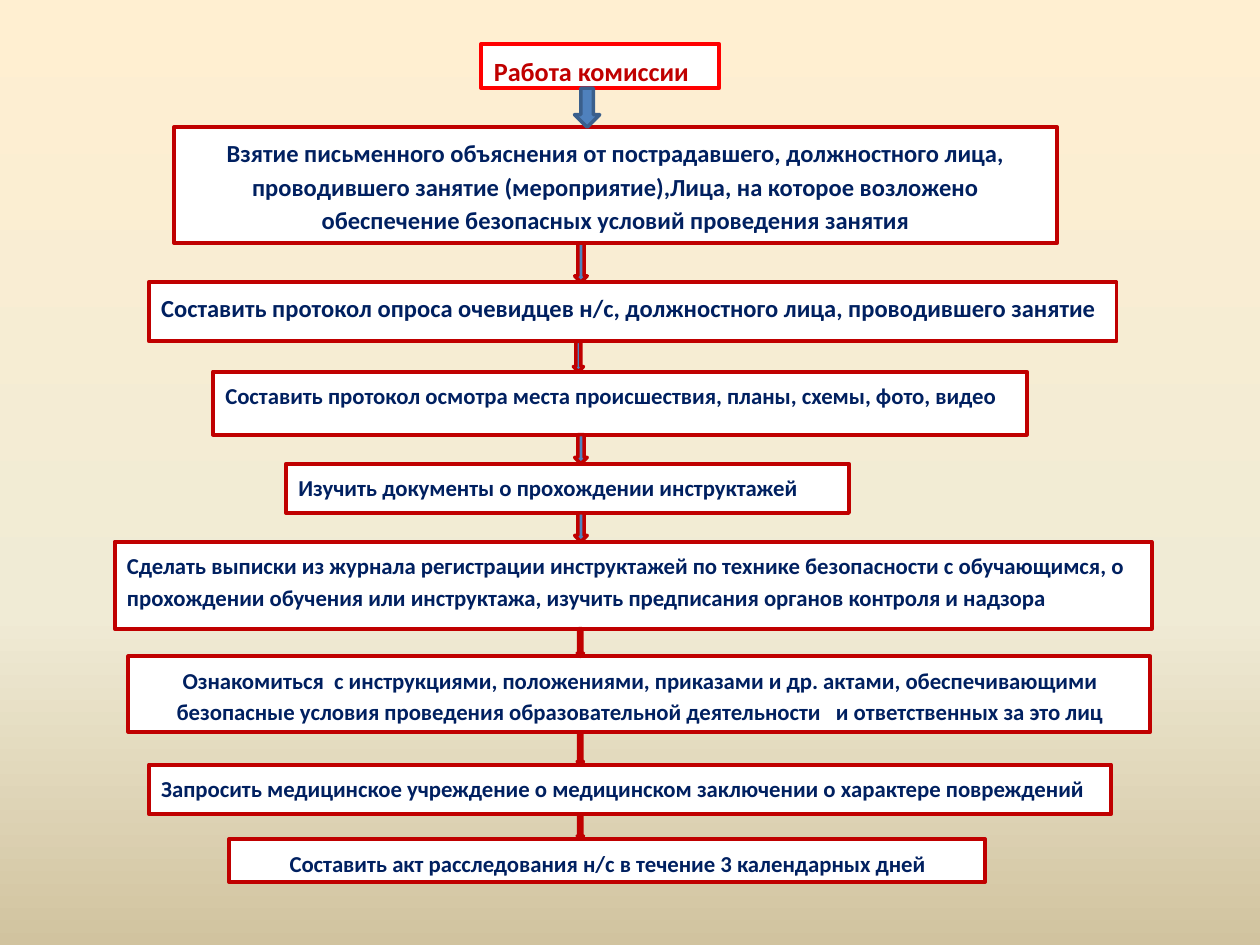
from copy import deepcopy

from pptx import Presentation
from pptx.dml.color import RGBColor
from pptx.enum import shapes, text
from pptx.util import Pt

COLORS = {
    "white": "FFFFFF", "red": "FF0000", "dark_red": "C00000", "navy": "002060",
    "blue": "4F81BD", "steel": "3A5F8C",
    "cream": "FFEFD1", "ivory": "F0EBD5", "sand": "D1C39F",
}
LEFT, CENTER = text.PP_ALIGN.LEFT, text.PP_ALIGN.CENTER
FIXED, GROW = text.MSO_AUTO_SIZE.NONE, text.MSO_AUTO_SIZE.SHAPE_TO_FIT_TEXT

HEADING = ("Работа комиссии", (275, 25.2, 136, 25.2))

# wording, (left, top, width, height), text size, alignment, autosize
STEPS = [
    ("Взятие письменного объяснения от пострадавшего, должностного лица, "
     "проводившего занятие (мероприятие),Лица, на которое возложено "
     "обеспечение безопасных условий проведения занятия",
     (99.4, 72.7, 504.7, 66.2), 14, CENTER, FIXED),
    ("Составить протокол опроса очевидцев н/с, должностного лица, "
     "проводившего занятие",
     (85, 161.3, 553, 33.8), 14, LEFT, FIXED),
    ("Составить протокол осмотра места происшествия, планы, схемы, фото, видео",
     (121.7, 212.4, 465.1, 36), 13, LEFT, FIXED),
    ("Изучить документы о прохождении инструктажей",
     (163.4, 265, 321.8, 28.1), 13, LEFT, FIXED),
    ("Сделать выписки из журнала регистрации инструктажей по технике "
     "безопасности с обучающимся, о прохождении обучения или инструктажа, "
     "изучить предписания органов контроля и надзора",
     (65.5, 309.6, 592.6, 49.7), 13, LEFT, FIXED),
    ("Ознакомиться  с инструкциями, положениями, приказами и др. актами, "
     "обеспечивающими безопасные условия проведения образовательной "
     "деятельности   и ответственных за это лиц",
     (73.4, 375.1, 583.9, 43.2), 13, CENTER, GROW),
    ("Запросить медицинское учреждение о медицинском заключении о характере "
     "повреждений",
     (85, 437, 550, 28.1), 13, LEFT, FIXED),
    ("Составить акт расследования н/с в течение 3 календарных дней",
     (131, 479.5, 432, 24.5), 13, CENTER, GROW),
]

# (centre, width) of the arrow that leads into each step
ARROWS = [(335.5, 14.4), (332, 7.2), (330.5, 5.8), (332, 7.2), (332, 7.2),
          (331.6, 3.6), (331.6, 3.6), (331.6, 3.6)]


def rgb(name):
    return RGBColor.from_string(COLORS[name])


def write(shape, wording, size, color="navy", align=LEFT, autosize=FIXED):
    frame = shape.text_frame
    frame.word_wrap = True
    frame.auto_size = autosize
    frame.vertical_anchor = text.MSO_ANCHOR.TOP
    paragraph = frame.paragraphs[0]
    paragraph.alignment = align
    paragraph.line_spacing = 1.15
    paragraph.space_after = Pt(10)
    run = paragraph.add_run()
    run.text = wording
    run.font.name = "Calibri"
    run.font.size = Pt(size)
    run.font.bold = True
    run.font.color.rgb = rgb(color)


class FlowSlide:
    """Holds the slide and the look of its boxes and arrows."""

    box_line, arrow_line = 2.25, 2

    def __init__(self, deck):
        self.slide = deck.slides.add_slide(deck.slide_layouts[5])

    def background(self, stops):
        fill = self.slide.background.fill
        fill.gradient()
        fill.gradient_angle = 270
        first = self.slide.background._cSld.xpath(".//a:gs")[0]
        first.addnext(deepcopy(first))
        for stop, (position, color) in zip(fill.gradient_stops, stops):
            stop.position = position
            stop.color.rgb = rgb(color)

    def paint(self, shape, fill, line, width):
        shape.fill.solid()
        shape.fill.fore_color.rgb = rgb(fill)
        shape.line.color.rgb = rgb(line)
        shape.line.width = Pt(width)

    def add(self, kind, place):
        shape = self.slide.shapes.add_shape(kind, *map(Pt, place))
        shape.shadow.inherit = False
        return shape

    def heading(self, wording, place):
        title = self.slide.shapes.title
        title.left, title.top, title.width, title.height = map(Pt, place)
        self.paint(title, "white", "red", self.box_line)
        write(title, wording, 15, color="dark_red")

    def step(self, wording, place, size, align, autosize):
        box = self.add(shapes.MSO_SHAPE.RECTANGLE, place)
        self.paint(box, "white", "dark_red", self.box_line)
        write(box, wording, size, align=align, autosize=autosize)

    def arrow(self, upper, lower, center, width, line):
        """Fill the gap between two box places with a down arrow."""
        top = upper[1] + upper[3]
        place = (center - width / 2, top, width, lower[1] - top)
        arrow = self.add(shapes.MSO_SHAPE.DOWN_ARROW, place)
        self.paint(arrow, "blue", line, self.arrow_line)


def main():
    deck = Presentation()
    deck.slide_width, deck.slide_height = Pt(720), Pt(540)
    flow = FlowSlide(deck)
    flow.background([(0, "cream"), (0.65, "ivory"), (1, "sand")])
    flow.heading(*HEADING)
    for step in STEPS:
        flow.step(*step)
    places = [HEADING[1]] + [step[1] for step in STEPS]
    for index, (center, width) in enumerate(ARROWS):
        line = "dark_red" if index else "steel"
        flow.arrow(places[index], places[index + 1], center, width, line)
    deck.save("out.pptx")


if __name__ == "__main__":
    main()
